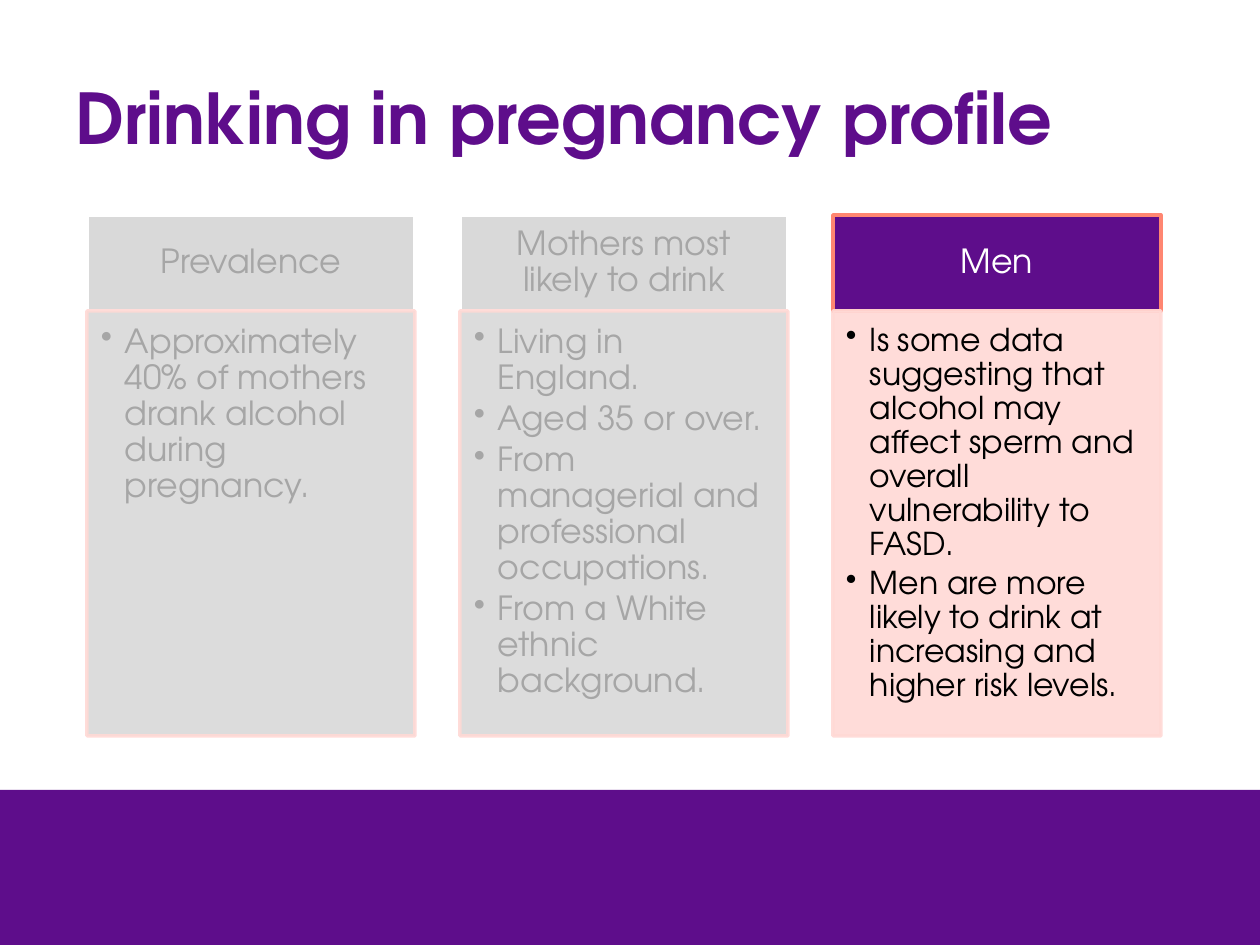
from dataclasses import dataclass

from lxml import etree
from pptx import Presentation, util as u
from pptx.dml.color import RGBColor
from pptx.enum import shapes, text
from pptx.oxml.ns import qn

PX = u.Inches(1) / 126


@dataclass(frozen=True)
class Theme:
    font: str = "TeX Gyre Adventor"
    purple: str = "5E0D8B"
    coral: str = "FF8671"
    pink: str = "FFD9D5"
    gray: str = "D9D9D9"
    muted: str = "A6A6A6"
    white: str = "FFFFFF"
    black: str = "000000"
    title_size: int = 40
    card_size: int = 19
    active_size: int = 18
    body_alpha: int = 90


THEME = Theme()


@dataclass(frozen=True)
class Box:
    left: int
    top: int
    width: int
    height: int

    def emu(self) -> list[u.Emu]:
        return [px(n) for n in (self.left, self.top, self.width, self.height)]


@dataclass(frozen=True)
class Style:
    header_fill: str
    header_line: str
    header_text: str
    body_fill: str
    body_text: str
    body_size: int
    body_insets: tuple[int, int, int, int]


@dataclass(frozen=True)
class Card:
    heading: str
    points: tuple[str, ...]
    style: Style


MUTED = Style(THEME.gray, THEME.white, THEME.muted, THEME.gray, THEME.muted,
              THEME.card_size, (14, 14, 19, 21))
ACTIVE = Style(THEME.purple, THEME.coral, THEME.white, THEME.pink, THEME.black,
               THEME.active_size, (13, 13, 18, 20))

CARDS = (
    Card("Prevalence",
         ("Approximately 40% of mothers drank alcohol during pregnancy.",), MUTED),
    Card("Mothers most likely to drink",
         ("Living in England.",
          "Aged 35 or over.",
          "From managerial and professional occupations.",
          "From a White ethnic background."), MUTED),
    Card("Men",
         ("Is some data suggesting that alcohol may affect sperm and overall "
          "vulnerability to FASD.",
          "Men are more likely to drink at increasing and higher risk levels."), ACTIVE),
)

TITLE = Box(63, 38, 1134, 158)
BAND = Box(0, 790, 1260, 155)
CARD_LEFT, CARD_TOP, CARD_WIDTH, CARD_PITCH = 87, 215, 328, 373
HEADER_HEIGHT, BODY_HEIGHT = 96, 425
HEADER_INSETS = (19, 10, 19, 10)
BULLET_INDENT = 24


def px(length: int) -> u.Emu:
    return u.Emu(round(length * PX))


def set_font(paragraph, size: int, color: str, bold: bool = False) -> None:
    for run in paragraph.runs:
        run.font.name = THEME.font
        run.font.size = u.Pt(size)
        run.font.bold = bold
        run.font.color.rgb = RGBColor.from_string(color)


def set_insets(frame, insets: tuple[int, int, int, int]) -> None:
    (frame.margin_left, frame.margin_top,
     frame.margin_right, frame.margin_bottom) = map(px, insets)


def add_rectangle(slide, box: Box, fill: str, line: str | None = None):
    rectangle = slide.shapes.add_shape(shapes.MSO_SHAPE.RECTANGLE, *box.emu())
    rectangle.shadow.inherit = False
    rectangle.fill.solid()
    rectangle.fill.fore_color.rgb = RGBColor.from_string(fill)
    if line is None:
        rectangle.line.fill.background()
    else:
        rectangle.line.color.rgb = RGBColor.from_string(line)
        rectangle.line.width = u.Pt(2)
    return rectangle


def set_opacity(rectangle, percent: int) -> None:
    """Apply one opacity to both the fill and the outline."""
    for color in rectangle.fill._xPr.iter(qn("a:srgbClr")):
        etree.SubElement(color, qn("a:alpha"), val=str(percent * 1000))


def add_bullet(paragraph) -> None:
    properties = paragraph._p.get_or_add_pPr()
    properties.set("marL", str(px(BULLET_INDENT)))
    properties.set("indent", str(-px(BULLET_INDENT)))
    etree.SubElement(properties, qn("a:buChar"), char="•")


def add_header(slide, box: Box, card: Card) -> None:
    style = card.style
    header = add_rectangle(slide, box, style.header_fill, style.header_line)
    frame = header.text_frame
    frame.word_wrap = True
    frame.vertical_anchor = text.MSO_ANCHOR.MIDDLE
    set_insets(frame, HEADER_INSETS)
    frame.text = card.heading
    heading = frame.paragraphs[0]
    heading.alignment = text.PP_ALIGN.CENTER
    heading.line_spacing = 0.9
    set_font(heading, THEME.card_size, style.header_text)


def add_body(slide, box: Box, card: Card) -> None:
    style = card.style
    body = add_rectangle(slide, box, style.body_fill, THEME.pink)
    set_opacity(body, THEME.body_alpha)
    frame = body.text_frame
    frame.word_wrap = True
    frame.vertical_anchor = text.MSO_ANCHOR.TOP
    set_insets(frame, style.body_insets)
    frame.text = "\n".join(card.points)
    for point in frame.paragraphs:
        add_bullet(point)
        point.level = 1
        point.alignment = text.PP_ALIGN.LEFT
        point.line_spacing = 0.9
        point.space_after = u.Pt(3)
        set_font(point, style.body_size, style.body_text)


def add_title(slide, wording: str) -> None:
    title = slide.shapes.title
    title.left, title.top, title.width, title.height = TITLE.emu()
    frame = title.text_frame
    frame.text = wording
    frame.word_wrap = True
    frame.auto_size = text.MSO_AUTO_SIZE.NONE
    frame.vertical_anchor = text.MSO_ANCHOR.MIDDLE
    frame.paragraphs[0].alignment = text.PP_ALIGN.LEFT
    set_font(frame.paragraphs[0], THEME.title_size, THEME.purple, bold=True)


def main() -> None:
    presentation = Presentation()
    presentation.slide_width = u.Inches(10)
    presentation.slide_height = u.Inches(7.5)
    slide = presentation.slides.add_slide(presentation.slide_layouts[5])

    add_rectangle(slide, BAND, THEME.purple)
    add_title(slide, "Drinking in pregnancy profile")
    for column, card in enumerate(CARDS):
        left = CARD_LEFT + column * CARD_PITCH
        add_header(slide, Box(left, CARD_TOP, CARD_WIDTH, HEADER_HEIGHT), card)
        add_body(slide, Box(left, CARD_TOP + HEADER_HEIGHT, CARD_WIDTH, BODY_HEIGHT), card)

    presentation.save("out.pptx")


if __name__ == "__main__":
    main()
